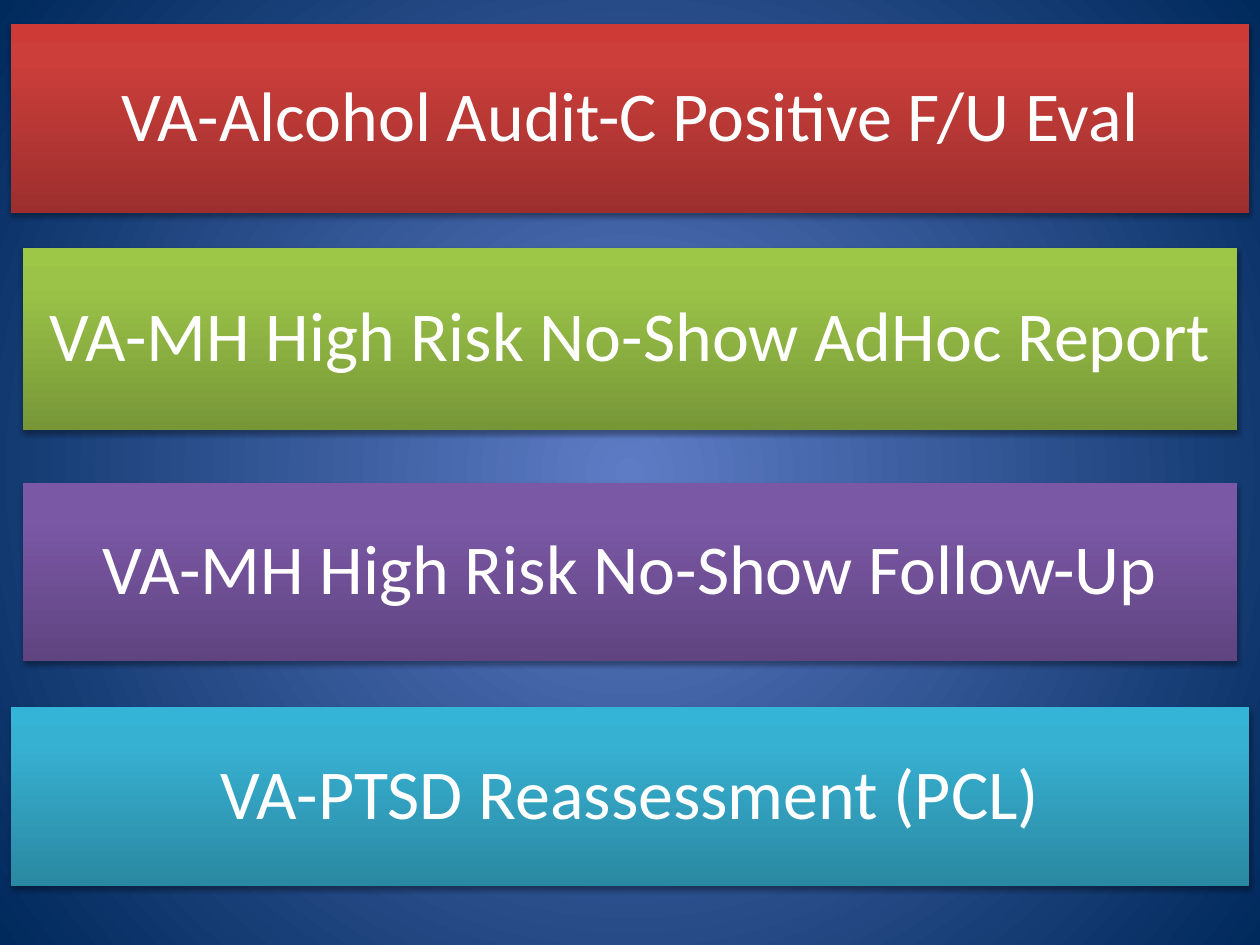
from dataclasses import dataclass

from pptx import Presentation
from pptx.dml.color import RGBColor
from pptx.enum.shapes import MSO_SHAPE
from pptx.enum.text import MSO_ANCHOR, PP_ALIGN
from pptx.oxml import parse_xml
from pptx.oxml.ns import nsdecls, qn
from pptx.util import Inches, Pt


@dataclass(frozen=True)
class Theme:
    font: str = "Calibri"
    text_size: int = 40
    text: str = "FFFFFF"
    shadow: str = "000000"
    background: tuple = ("5E7CC5", "00295C")
    red: tuple = ("9C2F2D", "CB3E3A", "CE3B37")
    green: tuple = ("779737", "9BC348", "9DC746")
    purple: tuple = ("5F4480", "7B58A6", "7C57A8")
    aqua: tuple = ("2A88A2", "37B1D2", "34B4D6")


THEME = Theme()
SLIDE_WIDTH = 10
SLIDE_HEIGHT = 7.5
WIDE = 9.83
NARROW = 9.64
INSET = 0.17
BACKGROUND_STOPS = (0, 100)
BANNER_STOPS = (0, 80, 100)
UPWARD = '<a:lin ang="16200000" scaled="0"/>'
RADIAL = (
    '<a:path path="circle">'
    '<a:fillToRect l="50000" t="50000" r="50000" b="50000"/></a:path>'
)

BANNERS = (
    ("VA-Alcohol Audit-C Positive F/U Eval", THEME.red, 0.19, WIDE, 1.5),
    ("VA-MH High Risk No-Show AdHoc Report", THEME.green, 1.97, NARROW, 1.44),
    ("VA-MH High Risk No-Show Follow-Up", THEME.purple, 3.83, NARROW, 1.42),
    ("VA-PTSD Reassessment (PCL)", THEME.aqua, 5.61, WIDE, 1.42),
)


def set_gradient(fill, properties, positions, colors, direction):
    fill.solid()
    stops = "".join(
        f'<a:gs pos="{position * 1000}"><a:srgbClr val="{color}"/></a:gs>'
        for position, color in zip(positions, colors)
    )
    gradient = parse_xml(
        f'<a:gradFill {nsdecls("a")} rotWithShape="1">'
        f"<a:gsLst>{stops}</a:gsLst>{direction}</a:gradFill>"
    )
    properties.replace(properties.find(qn("a:solidFill")), gradient)


def set_background(slide):
    fill = slide.background.fill
    fill.solid()
    properties = slide.element.find(".//" + qn("p:bgPr"))
    set_gradient(fill, properties, BACKGROUND_STOPS, THEME.background, RADIAL)


def add_shadow(shape):
    shape.shadow.inherit = False
    shape.element.spPr.find(qn("a:effectLst")).append(parse_xml(
        f'<a:outerShdw {nsdecls("a")} blurRad="{Pt(3.1)}" dist="{Pt(1.8)}" '
        f'dir="5400000" rotWithShape="0"><a:srgbClr val="{THEME.shadow}">'
        '<a:alpha val="35000"/></a:srgbClr></a:outerShdw>'
    ))


def add_label(shape, text):
    frame = shape.text_frame
    frame.word_wrap = True
    frame.vertical_anchor = MSO_ANCHOR.MIDDLE
    frame.margin_left = frame.margin_right = Inches(INSET)
    frame.margin_top = frame.margin_bottom = Inches(INSET)
    paragraph = frame.paragraphs[0]
    paragraph.alignment = PP_ALIGN.CENTER
    paragraph.line_spacing = 0.9
    run = paragraph.add_run()
    run.text = text
    run.font.name = THEME.font
    run.font.size = Pt(THEME.text_size)
    run.font.color.rgb = RGBColor.from_string(THEME.text)


def add_banner(slide, text, colors, top, width, height):
    left = (SLIDE_WIDTH - width) / 2
    shape = slide.shapes.add_shape(
        MSO_SHAPE.RECTANGLE,
        Inches(left), Inches(top), Inches(width), Inches(height),
    )
    set_gradient(shape.fill, shape.element.spPr, BANNER_STOPS, colors, UPWARD)
    shape.line.fill.background()
    add_shadow(shape)
    add_label(shape, text)


def main():
    presentation = Presentation()
    presentation.slide_width = Inches(SLIDE_WIDTH)
    presentation.slide_height = Inches(SLIDE_HEIGHT)
    blank_layout = presentation.slide_layouts[6]
    slide = presentation.slides.add_slide(blank_layout)
    set_background(slide)
    for banner in BANNERS:
        add_banner(slide, *banner)
    presentation.save("out.pptx")


if __name__ == "__main__":
    main()
